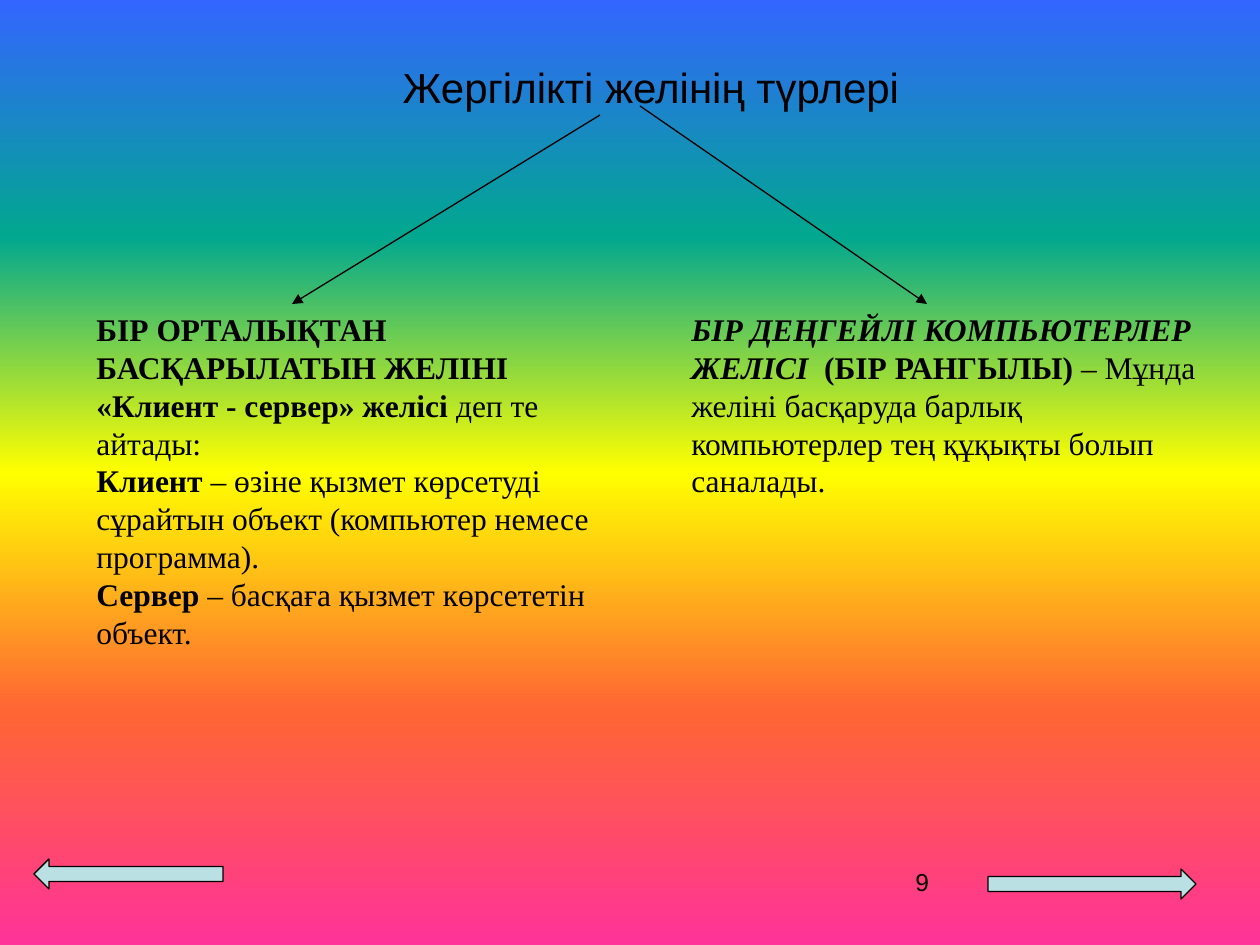
from dataclasses import dataclass

from lxml import etree
from pptx import Presentation
from pptx.dml.color import RGBColor
from pptx.enum.shapes import MSO_CONNECTOR, MSO_SHAPE
from pptx.enum.text import MSO_ANCHOR, MSO_AUTO_SIZE, PP_ALIGN
from pptx.oxml.ns import qn
from pptx.util import Emu, Pt

STRAIGHT = MSO_CONNECTOR.STRAIGHT
LEFT_ARROW, RIGHT_ARROW = MSO_SHAPE.LEFT_ARROW, MSO_SHAPE.RIGHT_ARROW
TOP = MSO_ANCHOR.TOP
NO_FIT = MSO_AUTO_SIZE.NONE
LEFT, CENTER, RIGHT = PP_ALIGN.LEFT, PP_ALIGN.CENTER, PP_ALIGN.RIGHT
EMU_PER_PX = 914400 / 126


@dataclass(frozen=True)
class Theme:
    ink: str = "000000"
    arrow_fill: str = "BBE0E3"
    rainbow: tuple = ("FF3399", "FF6633", "FFFF00", "01A78F", "3366FF")
    heading_font: str = "Arial"
    body_font: str = "Times New Roman"
    title_size: int = 24
    body_size: int = 18
    number_size: int = 14
    line_width: float = 0.75


THEME = Theme()

CLIENT_SERVER = [
    [("БІР ОРТАЛЫҚТАН БАСҚАРЫЛАТЫН ЖЕЛІНІ «Клиент - сервер» желісі", "b"),
     (" деп те айтады:", "")],
    [("Клиент ", "b"),
     ("– өзіне қызмет көрсетуді сұрайтын объект (компьютер немесе программа).", "")],
    [("Сервер", "b"), (" – басқаға қызмет көрсететін объект.", "")],
]
PEER_TO_PEER = [
    [("БІР ДЕҢГЕЙЛІ КОМПЬЮТЕРЛЕР ЖЕЛІСІ  ", "bi"),
     ("(БІР РАНГЫЛЫ) ", "b"),
     ("– Мұнда желіні басқаруда барлық компьютерлер тең құқықты болып саналады.", "")],
]


def px(*values):
    return [Emu(round(value * EMU_PER_PX)) for value in values]


def color(value):
    return RGBColor.from_string(value)


def paint_background(slide):
    fill = slide.background.fill
    fill.gradient()
    fill.gradient_angle = 90
    stops = next(slide.element.iter(qn("a:gsLst")))
    for stop in list(stops):
        stops.remove(stop)
    step = 100000 // (len(THEME.rainbow) - 1)
    for index, value in enumerate(THEME.rainbow):
        stop = etree.SubElement(stops, qn("a:gs"), pos=str(index * step))
        etree.SubElement(stop, qn("a:srgbClr"), val=value)


def format_run(run, font_name, size, style=""):
    font = run.font
    font.name = font_name
    font.size = Pt(size)
    font.bold = "b" in style
    font.italic = "i" in style
    font.color.rgb = color(THEME.ink)


def prepare_frame(shape, alignment):
    frame = shape.text_frame
    frame.word_wrap = True
    frame.auto_size = NO_FIT
    frame.vertical_anchor = TOP
    frame.paragraphs[0].alignment = alignment
    return frame


def add_title(slide, box):
    title = slide.shapes.title
    title.left, title.top, title.width, title.height = px(*box)
    frame = prepare_frame(title, CENTER)
    frame.text = "Жергілікті желінің түрлері"
    format_run(frame.paragraphs[0].runs[0], THEME.heading_font, THEME.title_size)


def add_description(slide, box, lines):
    frame = prepare_frame(slide.shapes.add_textbox(*px(*box)), LEFT)
    paragraph = frame.paragraphs[0]
    for index, line in enumerate(lines):
        if index:
            paragraph.add_line_break()
        for text, style in line:
            run = paragraph.add_run()
            run.text = text
            format_run(run, THEME.body_font, THEME.body_size, style)


def add_slide_number(slide, box):
    frame = prepare_frame(slide.shapes.add_textbox(*px(*box)), RIGHT)
    frame.text = "9"
    format_run(frame.paragraphs[0].runs[0], THEME.heading_font, THEME.number_size)


def draw_outline(line):
    line.color.rgb = color(THEME.ink)
    line.width = Pt(THEME.line_width)


def add_branch(slide, start, end):
    connector = slide.shapes.add_connector(STRAIGHT, *px(*start, *end))
    draw_outline(connector.line)
    etree.SubElement(connector.line._get_or_add_ln(), qn("a:tailEnd"), type="triangle")
    etree.SubElement(connector._element.spPr, qn("a:effectLst"))


def add_navigation_arrow(slide, box, kind):
    arrow = slide.shapes.add_shape(kind, *px(*box))
    arrow.shadow.inherit = False
    arrow.fill.solid()
    arrow.fill.fore_color.rgb = color(THEME.arrow_fill)
    draw_outline(arrow.line)


def build_network_types(presentation):
    slide = presentation.slides.add_slide(presentation.slide_layouts[5])
    paint_background(slide)
    add_slide_number(slide, (903, 861, 294, 66))
    add_description(slide, (84, 304, 546, 357), CLIENT_SERVER)
    add_description(slide, (679, 304, 536, 202), PEER_TO_PEER)
    add_title(slide, (353, 55, 596, 63))
    add_branch(slide, (600, 115), (292, 304))
    add_branch(slide, (640, 106), (927, 304))
    add_navigation_arrow(slide, (988, 869, 208, 30), RIGHT_ARROW)
    add_navigation_arrow(slide, (34, 859, 189, 30), LEFT_ARROW)


def main():
    presentation = Presentation()
    presentation.slide_width, presentation.slide_height = px(1260, 945)
    build_network_types(presentation)
    presentation.save("out.pptx")


if __name__ == "__main__":
    main()
